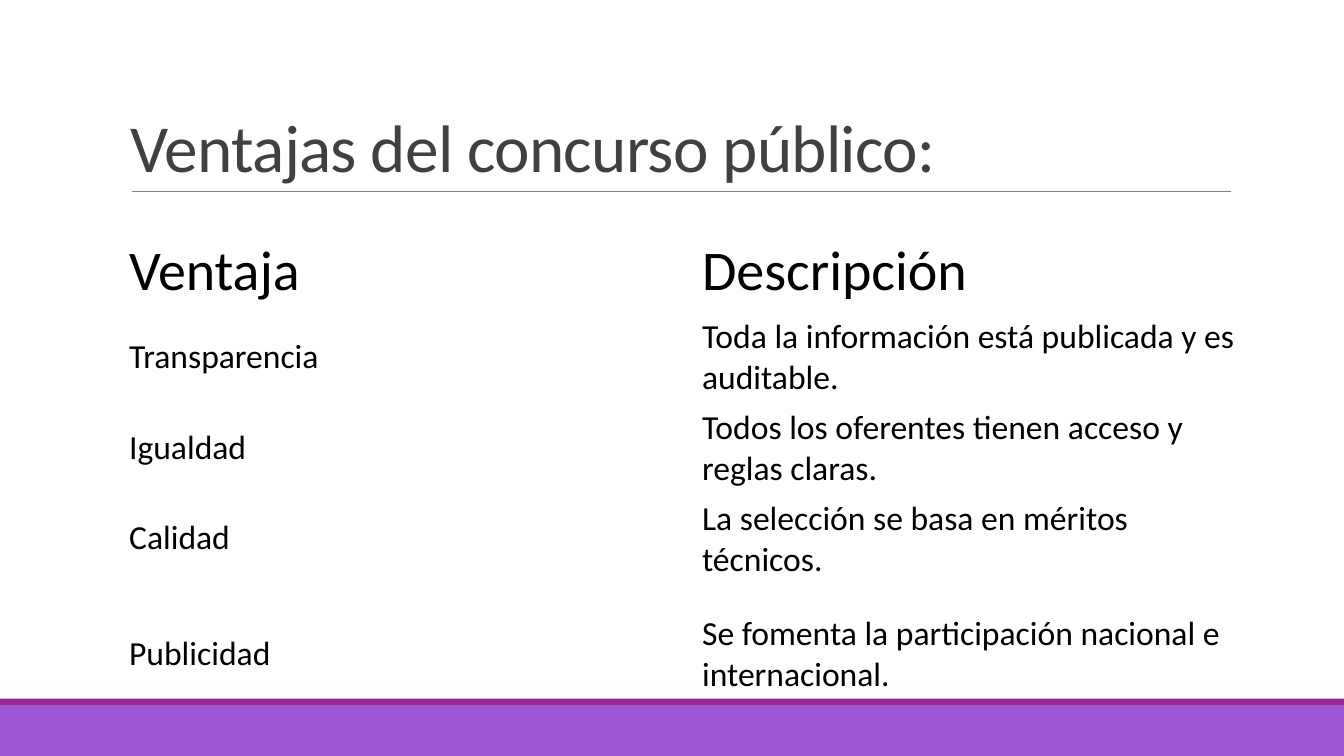
from pptx import Presentation
from pptx.dml.color import RGBColor
from pptx.enum.shapes import MSO_CONNECTOR, MSO_SHAPE
from pptx.enum.text import MSO_ANCHOR
from pptx.oxml.ns import qn
from pptx.util import Pt
from lxml import etree

RECTANGLE = MSO_SHAPE.RECTANGLE
STRAIGHT = MSO_CONNECTOR.STRAIGHT
BOTTOM = MSO_ANCHOR.BOTTOM
MIDDLE = MSO_ANCHOR.MIDDLE
NO_STYLE_NO_GRID = "{2D5ABB26-0587-4C30-8999-92F81FD0307C}"


def color(hex_string):
    return RGBColor.from_string(hex_string)


def set_font(para, size, hex_string):
    para.font.name = "Calibri"
    para.font.size = Pt(size)
    para.font.color.rgb = color(hex_string)


deck = Presentation()
deck.slide_width = Pt(960)
deck.slide_height = Pt(540)
page = deck.slides.add_slide(deck.slide_layouts[6])

for top, height, fill in [(504, 36, "9B57D3"), (499, 5, "92278F")]:
    band = page.shapes.add_shape(RECTANGLE, 0, Pt(top), deck.slide_width, Pt(height))
    band.shadow.inherit = False
    band.fill.solid()
    band.fill.fore_color.rgb = color(fill)
    band.line.fill.background()

rule = page.shapes.add_connector(STRAIGHT, Pt(94.3), Pt(136.8), Pt(879), Pt(136.8))
rule.line.color.rgb = color("808080")
rule.line.width = Pt(0.5)
etree.SubElement(rule._element.spPr, qn("a:effectLst"))

title = page.shapes.add_textbox(Pt(86.4), Pt(22.5), Pt(792), Pt(114.3))
title.text_frame.word_wrap = True
title.text_frame.vertical_anchor = BOTTOM
para = title.text_frame.paragraphs[0]
para.line_spacing = 0.85
set_font(para, 48, "404040")
span = para.add_run()
span.text = "Ventajas del concurso público:"
span._r.get_or_add_rPr().set("spc", "-50")

advantages = [
    ("Ventaja", "Descripción"),
    ("Transparencia", "Toda la información está publicada y es auditable."),
    ("Igualdad", "Todos los oferentes tienen acceso y reglas claras."),
    ("Calidad", "La selección se basa en méritos técnicos."),
    ("Publicidad", "Se fomenta la participación nacional e internacional."),
]
row_heights = [57.6, 57.6, 57.6, 57.6, 100.8]
frame = page.shapes.add_table(
    len(advantages), 2, Pt(85), Pt(165), Pt(818.6), Pt(sum(row_heights)))
table = frame.table
table.first_row = False
table.horz_banding = False
table._tbl.tblPr.find(qn("a:tableStyleId")).text = NO_STYLE_NO_GRID

for row_number, (texts, height) in enumerate(zip(advantages, row_heights)):
    table.rows[row_number].height = Pt(height)
    for column_number, text in enumerate(texts):
        cell = table.cell(row_number, column_number)
        cell.fill.background()
        cell.vertical_anchor = MIDDLE
        cell.text = text
        set_font(cell.text_frame.paragraphs[0], 40 if row_number == 0 else 24, "000000")

deck.save("out.pptx")
